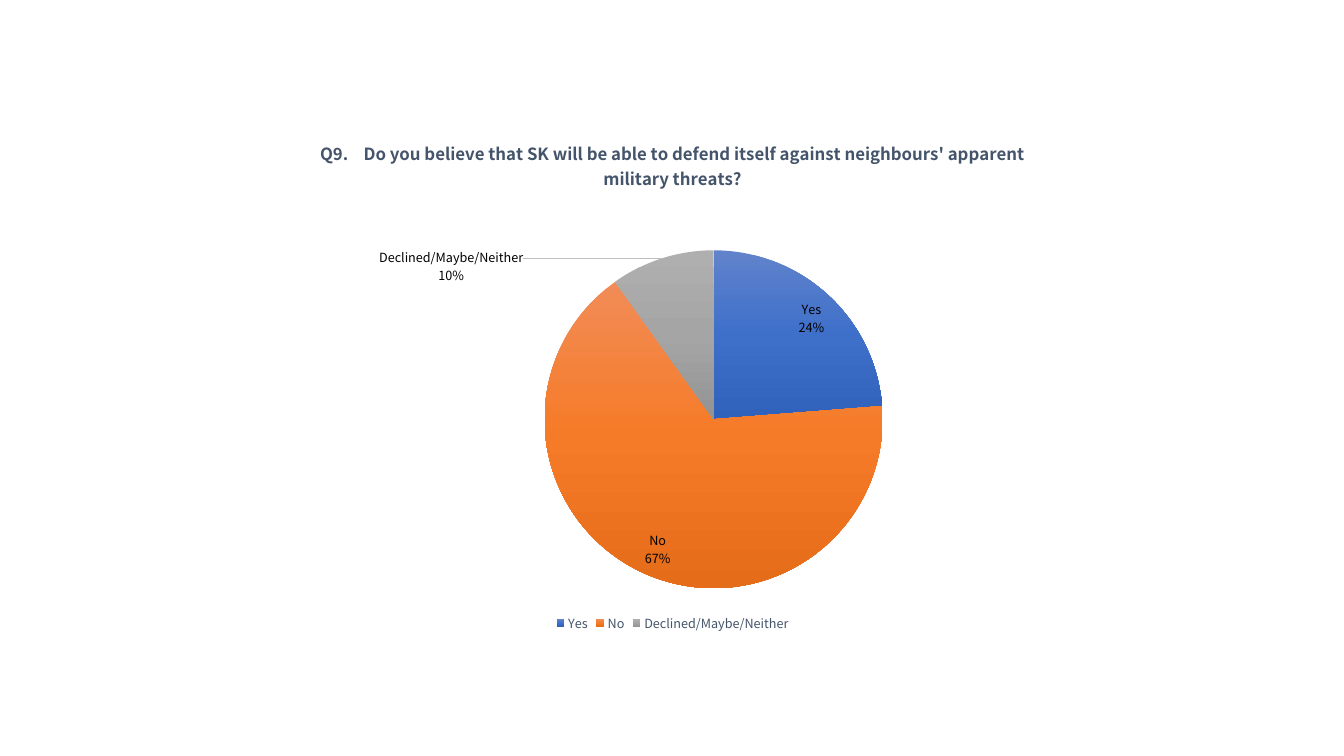
from copy import deepcopy
from dataclasses import dataclass

from lxml.etree import _Element
from pptx import Presentation
from pptx.chart.chart import Chart
from pptx.chart.data import CategoryChartData
from pptx.dml.color import RGBColor
from pptx.enum.chart import XL_CHART_TYPE, XL_LABEL_POSITION, XL_LEGEND_POSITION
from pptx.oxml import parse_xml
from pptx.oxml.ns import nsdecls, qn
from pptx.text.text import Font
from pptx.util import Emu, Pt

PX = 9144  # 100 px to the inch
FONT = "Noto Sans CJK KR"
QUESTION = (
    "Q9.    Do you believe that SK will be able to defend itself "
    "against neighbours' apparent military threats?"
)
PERCENT_FORMAT = '0"%"'
COLORS = {
    "heading": "44546A",
    "label": "000000",
    "leader": "BFBFBF",
    "blue top": "6183CB", "blue middle": "3E70CA", "blue bottom": "3062BB",
    "orange top": "F18C57", "orange middle": "F67B28", "orange bottom": "E56C19",
    "gray top": "AFAFAF", "gray middle": "A5A5A5", "gray bottom": "939393",
}


@dataclass(frozen=True)
class Answer:
    name: str
    percent: int
    hue: str


ANSWERS = [
    Answer("Yes", 24, "blue"),
    Answer("No", 67, "orange"),
    Answer("Declined/Maybe/Neither", 10, "gray"),
]


def px(length: int) -> Emu:
    return Emu(length * PX)


def color(name: str) -> RGBColor:
    return RGBColor.from_string(COLORS[name])


def style_font(font: Font, size: int, color_name: str, bold: bool = False) -> None:
    font.name = FONT
    font.size = Pt(size)
    font.bold = bold
    font.color.rgb = color(color_name)


def manual_layout(**settings: str | float) -> _Element:
    items = "".join(f'<c:{key} val="{value}"/>' for key, value in settings.items())
    return parse_xml(
        f'<c:layout {nsdecls("c")}><c:manualLayout>{items}</c:manualLayout></c:layout>'
    )


def add_separator(labels: _Element) -> None:
    """Put the category and its share on separate lines."""
    separator = parse_xml(f'<c:separator {nsdecls("c")}>\n</c:separator>')
    labels.find(qn("c:showBubbleSize")).addnext(separator)


def paint_slices(chart: Chart) -> None:
    series = chart.plots[0].series[0]
    for index, answer in enumerate(ANSWERS):
        fill = series.points[index].format.fill
        fill.gradient()
        fill.gradient_angle = 270
        stop_list = series._element.findall(qn("c:dPt"))[index].find(f".//{qn('a:gsLst')}")
        stop_list.insert(1, deepcopy(stop_list[0]))
        for step, (stop, part) in enumerate(
            zip(fill.gradient_stops, ("top", "middle", "bottom"))
        ):
            stop.position = step / 2
            stop.color.rgb = color(f"{answer.hue} {part}")


def label_slices(chart: Chart) -> None:
    series = chart.plots[0].series[0]
    labels = series.data_labels
    labels.show_category_name = True
    labels.show_value = True
    labels.number_format = PERCENT_FORMAT
    labels.number_format_is_linked = False
    labels.position = XL_LABEL_POSITION.INSIDE_END
    style_font(labels.font, 9, "label")
    labels_xml = series._element.find(qn("c:dLbls"))
    add_separator(labels_xml)
    labels_xml.find(qn("c:showLeaderLines")).addnext(parse_xml(
        f'<c:leaderLines {nsdecls("c", "a")}><c:spPr><a:ln w="9525"><a:solidFill>'
        f'<a:srgbClr val="{COLORS["leader"]}"/></a:solidFill></a:ln></c:spPr></c:leaderLines>'
    ))

    # The smallest slice has its label outside, to the left
    outer_label = series.points[len(ANSWERS) - 1].data_label
    outer_label.position = XL_LABEL_POSITION.OUTSIDE_END
    style_font(outer_label.font, 9, "label")
    outer_xml = labels_xml.find(qn("c:dLbl"))
    outer_xml.find(qn("c:showCatName")).set("val", "1")
    add_separator(outer_xml)
    layout = manual_layout(x=-0.15, y=0.06)
    outer_xml.find(qn("c:idx")).addnext(layout)
    layout.addnext(deepcopy(labels_xml.find(qn("c:numFmt"))))


def main() -> None:
    deck = Presentation()
    deck.slide_width, deck.slide_height = px(1333), px(750)
    page = deck.slides.add_slide(deck.slide_layouts[6])

    # Pie chart
    data = CategoryChartData()
    data.categories = [answer.name for answer in ANSWERS]
    data.add_series(QUESTION, [answer.percent for answer in ANSWERS])
    chart = page.shapes.add_chart(
        XL_CHART_TYPE.PIE, px(214), px(119), px(906), px(512), data
    ).chart
    style_font(chart.font, 10, "label")
    chart.plots[0].vary_by_categories = True
    plot_area = chart._chartSpace.chart.plotArea
    for old_layout in plot_area.findall(qn("c:layout")):
        plot_area.remove(old_layout)
    plot_area.insert(0, manual_layout(
        layoutTarget="inner", xMode="edge", yMode="edge", x=0.36, y=0.25, w=0.37, h=0.66
    ))
    paint_slices(chart)
    label_slices(chart)

    # Question above the pie
    chart.has_title = True
    para = chart.chart_title.text_frame.paragraphs[0]
    para.add_run().text = QUESTION
    style_font(para.font, 12, "heading", bold=True)

    # Legend
    chart.has_legend = True
    chart.legend.position = XL_LEGEND_POSITION.BOTTOM
    chart.legend.include_in_layout = False
    style_font(chart.legend.font, 9, "heading")

    deck.save("out.pptx")


if __name__ == "__main__":
    main()
